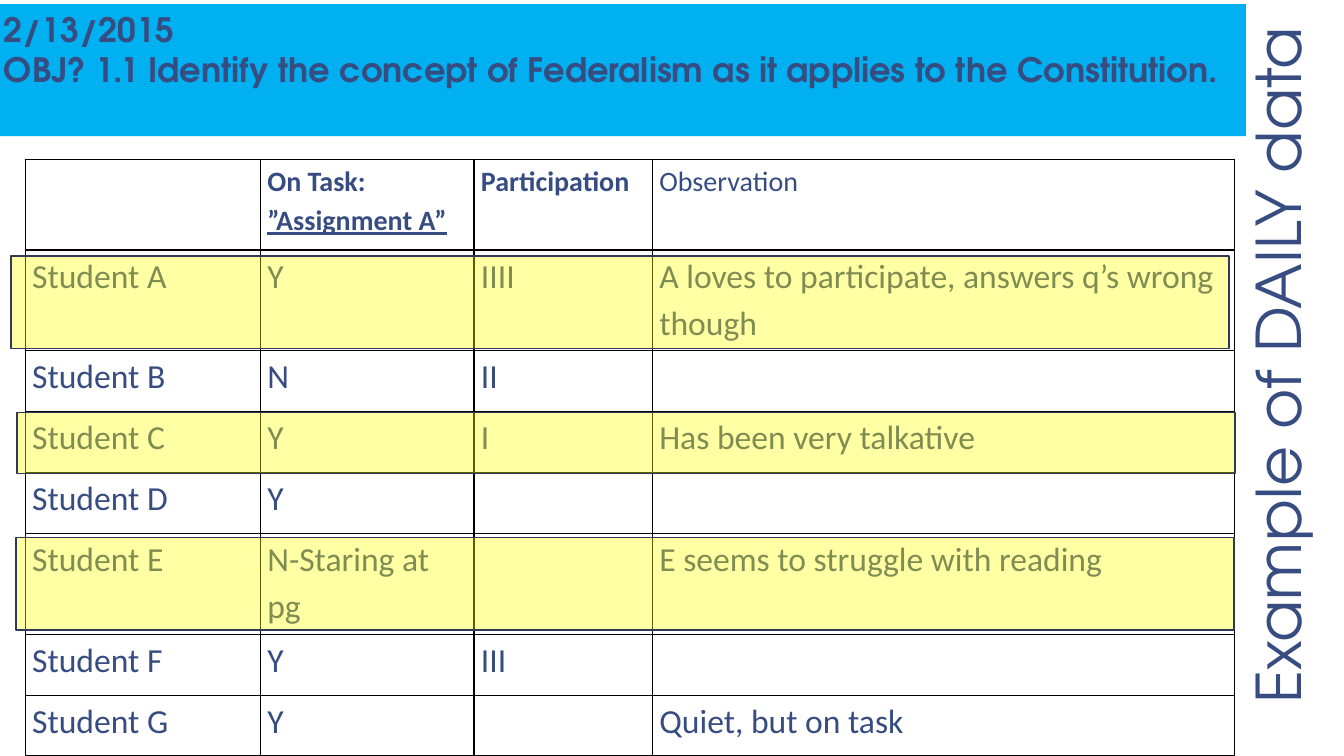
from lxml import etree
from pptx import Presentation
from pptx import util as u
from pptx.dml.color import RGBColor
from pptx.enum import shapes, text
from pptx.oxml.ns import qn

Pt = u.Pt
NAVY = RGBColor(0x37, 0x4C, 0x81)
SKY = RGBColor(0x00, 0xB0, 0xF0)
YELLOW = RGBColor(0xFF, 0xFF, 0x00)
OUTLINE = RGBColor(0x30, 0x3A, 0x58)
DISPLAY, BODY = "TeX Gyre Adventor", "Calibri"

COLUMNS = [168, 152.6, 127.4, 416]
HEADER_HEIGHT, ROW_HEIGHT, TALL_ROW_HEIGHT = 64.8, 43.5, 72
HEADER = [
    [],
    [("On Task: ", True, False), ("”Assignment A”", True, True)],
    [("Participation", True, False)],
    [("Observation", False, False)],
]
STUDENTS = [
    ("Student A", "Y", "IIII", "A loves to participate, answers q’s wrong though"),
    ("Student B", "N", "II", ""),
    ("Student C", "Y", "I", "Has been very talkative"),
    ("Student D", "Y", "", ""),
    ("Student E", "N-Staring at pg", "", "E seems to struggle with reading"),
    ("Student F", "Y", "III", ""),
    ("Student G", "Y", "", "Quiet, but on task"),
]
TALL_ROWS = (1, 5)
# Left, top, width, height of each highlighted row
HIGHLIGHTS = [
    (11.5, 383.8, 870, 66.2),
    (12.2, 294.5, 870, 43.9),
    (7.9, 182.9, 870, 66.2),
]


def add_run(p, words, font, size, bold=False, underline=False):
    r = p.add_run()
    r.text = words
    r.font.name, r.font.size = font, Pt(size)
    r.font.bold, r.font.underline = bold, underline
    r.font.color.rgb = NAVY


def set_borders(cell):
    tcPr = cell._tc.get_or_add_tcPr()
    for i, side in enumerate(("lnL", "lnR", "lnT", "lnB")):
        ln = etree.Element(qn(f"a:{side}"), w=str(Pt(1)))
        fill = etree.SubElement(ln, qn("a:solidFill"))
        etree.SubElement(fill, qn("a:srgbClr"), val="000000")
        tcPr.insert(i, ln)


def add_rect(s, left, top, width, height, color):
    sp = s.shapes.add_shape(shapes.MSO_SHAPE.RECTANGLE,
                            Pt(left), Pt(top), Pt(width), Pt(height))
    sp.shadow.inherit = False
    sp.fill.solid()
    sp.fill.fore_color.rgb = color
    return sp


def add_side_title(s, left, top, width, height):
    sp = s.shapes.title
    sp.left, sp.top, sp.width, sp.height = Pt(left), Pt(top), Pt(width), Pt(height)
    sp.rotation = 270
    tf = sp.text_frame
    tf.word_wrap = True
    tf.auto_size = text.MSO_AUTO_SIZE.NONE
    tf.vertical_anchor = text.MSO_ANCHOR.TOP
    p = tf.paragraphs[0]
    p.alignment = text.PP_ALIGN.LEFT
    add_run(p, "Example of DAILY data", DISPLAY, 44)


def add_banner(s, left, top, width, height):
    sp = add_rect(s, left, top, width, height, SKY)
    sp.line.fill.background()
    tf = sp.text_frame
    tf.word_wrap = True
    tf.vertical_anchor = text.MSO_ANCHOR.TOP
    lines = ("2/13/2015",
             "OBJ? 1.1 Identify the concept of Federalism as it applies to the Constitution.")
    for i, line in enumerate(lines):
        p = tf.add_paragraph() if i else tf.paragraphs[0]
        p.alignment = text.PP_ALIGN.LEFT
        add_run(p, line, DISPLAY, 24, bold=True)


def add_student_table(s, left, top):
    heights = [HEADER_HEIGHT] + [
        TALL_ROW_HEIGHT if i in TALL_ROWS else ROW_HEIGHT
        for i in range(1, len(STUDENTS) + 1)]
    table = s.shapes.add_table(len(heights), len(COLUMNS), Pt(left), Pt(top),
                               Pt(sum(COLUMNS)), Pt(sum(heights))).table
    table.first_row = table.horz_banding = False
    for column, width in zip(table.columns, COLUMNS):
        column.width = Pt(width)
    body = [[[(words, False, False)] if words else [] for words in row]
            for row in STUDENTS]
    for i, row in enumerate([HEADER] + body):
        table.rows[i].height = Pt(heights[i])
        for j, runs in enumerate(row):
            cell = table.cell(i, j)
            cell.fill.background()
            set_borders(cell)
            cell.margin_left = cell.margin_right = Pt(5)
            cell.margin_top = cell.margin_bottom = 0
            p = cell.text_frame.paragraphs[0]
            p.line_spacing = 1.15
            for words, bold, underline in runs:
                add_run(p, words, BODY, 24 if i else 20, bold, underline)


def add_highlight(s, left, top, width, height):
    sp = add_rect(s, left, top, width, height, YELLOW)
    sp.line.color.rgb = OUTLINE
    sp.line.width = Pt(1)
    color = sp.fill._xPr.find(qn("a:solidFill"))[0]
    etree.SubElement(color, qn("a:alpha"), val="36000")


def main():
    prs = Presentation()
    prs.slide_width, prs.slide_height = Pt(960), Pt(540)
    s = prs.slides.add_slide(prs.slide_layouts[5])
    # Daily log
    add_student_table(s, 18, 113.8)
    # Objective and side title
    add_banner(s, -4.3, 2.9, 894.2, 94.3)
    add_side_title(s, 639.4, 206.6, 545.8, 60.5)
    # Rows to look at
    for box in HIGHLIGHTS:
        add_highlight(s, *box)
    prs.save("out.pptx")


if __name__ == "__main__":
    main()
